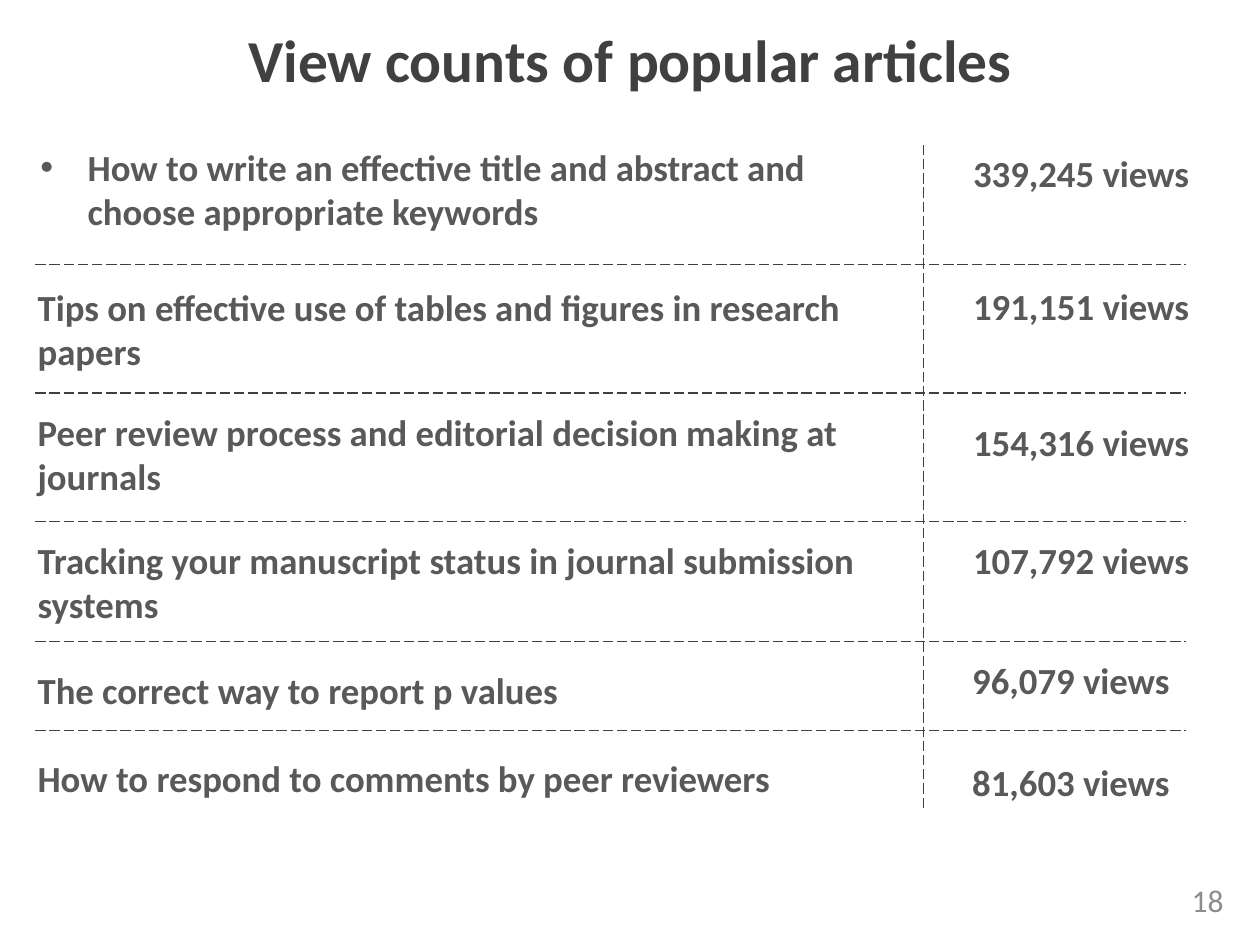
from lxml import etree
from pptx import Presentation
from pptx.dml.color import RGBColor
from pptx.enum.dml import MSO_LINE
from pptx.enum.shapes import MSO_CONNECTOR
from pptx.enum.text import MSO_ANCHOR, MSO_AUTO_SIZE, PP_ALIGN
from pptx.oxml.ns import qn
from pptx.util import Inches, Pt

STRAIGHT = MSO_CONNECTOR.STRAIGHT
LONG_DASH = MSO_LINE.LONG_DASH
TOP, MIDDLE = MSO_ANCHOR.TOP, MSO_ANCHOR.MIDDLE
LEFT, CENTER, RIGHT = PP_ALIGN.LEFT, PP_ALIGN.CENTER, PP_ALIGN.RIGHT
NO_AUTOFIT = MSO_AUTO_SIZE.NONE

DARK = RGBColor(0x40, 0x40, 0x40)
GREY = RGBColor(0x59, 0x59, 0x59)
LIGHT = RGBColor(0x8C, 0x8C, 0x8C)
FONT = "Calibri"

TITLE = "View counts of popular articles"
PAGE = "18"
ARTICLES = [
    ("How to write an effective title and abstract and choose appropriate keywords",
     (0.32, 1.15, 6.85, 0.79), "339,245 views", (7.44, 1.15)),
    ("Tips on effective use of tables and figures in research papers",
     (0.2, 2.21, 7.01, 0.76), "191,151 views", (7.44, 2.2)),
    ("Peer review process and editorial decision making at journals",
     (0.2, 3.2, 7.32, 0.94), "154,316 views", (7.44, 3.28)),
    ("Tracking your manuscript status in journal submission systems",
     (0.2, 4.22, 7.32, 0.94), "107,792 views", (7.44, 4.22)),
    ("The correct way to report p values",
     (0.2, 5.25, 7.32, 0.47), "96,079 views", (7.36, 5.17)),
    ("How to respond to comments by peer reviewers",
     (0.2, 5.95, 6.3, 0.47), "81,603 views", (7.36, 5.98)),
]
VIEWS_SIZE = (2.28, 0.6)
ROW_RULES = [2.1, 3.12, 4.14, 5.09, 5.8]
RULE_LEFT, RULE_RIGHT = 0.28, 9.41
COLUMN_X, COLUMN_TOP, COLUMN_BOTTOM = 7.33, 1.15, 6.43


def put_text(sp, text, box, size, color, align=LEFT, anchor=TOP, bold=True):
    sp.left, sp.top, sp.width, sp.height = map(Inches, box)
    tf = sp.text_frame
    tf.text = text
    tf.word_wrap = True
    tf.auto_size = NO_AUTOFIT
    tf.vertical_anchor = anchor
    p = tf.paragraphs[0]
    p.alignment = align
    p.space_before = Pt(0)
    font = p.runs[0].font
    font.name, font.size, font.bold = FONT, Pt(size), bold
    font.color.rgb = color


def add_rule(slide, x1, y1, x2, y2):
    line = slide.shapes.add_connector(STRAIGHT, *map(Inches, (x1, y1, x2, y2)))
    line.line.color.rgb = DARK
    line.line.width = Pt(0.75)
    line.line.dash_style = LONG_DASH
    etree.SubElement(line._element.spPr, qn("a:effectLst"))


def remove_bullet(p):
    pPr = p._p.get_or_add_pPr()
    pPr.set("marL", "0")
    pPr.set("indent", "0")
    etree.SubElement(pPr, qn("a:buNone"))


def add_box(slide):
    return slide.shapes.add_textbox(0, 0, 0, 0)


def main():
    prs = Presentation()
    prs.slide_width, prs.slide_height = Inches(10), Inches(7.5)
    slide = prs.slides.add_slide(prs.slide_layouts[1])
    put_text(slide.shapes.title, TITLE, (0.5, 0, 9, 0.94), 34, DARK, CENTER, MIDDLE)

    body = slide.placeholders[1]
    tf = body.text_frame
    tf.margin_left = tf.margin_top = tf.margin_right = tf.margin_bottom = 0
    remove_bullet(tf.paragraphs[0])

    for i, (article, box, views, corner) in enumerate(ARTICLES):
        put_text(add_box(slide) if i else body, article, box, 21, GREY)
        put_text(add_box(slide), views, corner + VIEWS_SIZE, 21, GREY, CENTER)

    for y in ROW_RULES:
        add_rule(slide, RULE_LEFT, y, RULE_RIGHT, y)
    add_rule(slide, COLUMN_X, COLUMN_TOP, COLUMN_X, COLUMN_BOTTOM)
    put_text(add_box(slide), PAGE, (7.48, 6.94, 2.33, 0.4), 18, LIGHT, RIGHT, MIDDLE, False)
    prs.save("out.pptx")


if __name__ == "__main__":
    main()
